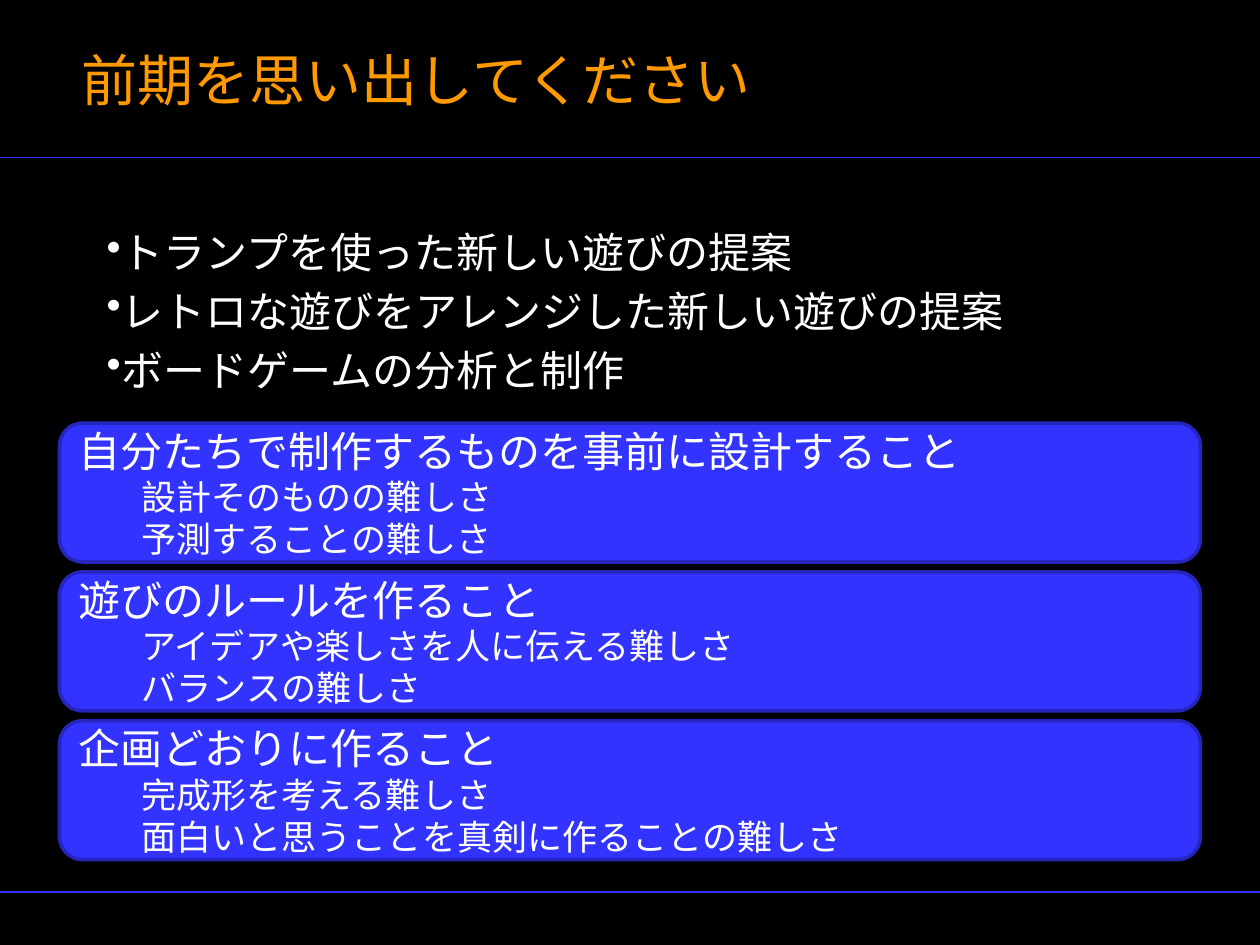
import pptx
import pptx.dml.color
import pptx.enum.shapes
import pptx.enum.text
import pptx.oxml
import pptx.oxml.ns
import pptx.util
from dataclasses import dataclass
from pptx.util import Cm


@dataclass(frozen=True)
class Theme:
    font: str = "Noto Sans CJK JP"
    background: str = "000000"
    title: str = "FF9900"
    text: str = "FFFFFF"
    accent: str = "3333FF"
    border: str = "2626BD"
    title_size: int = 32
    body_size: int = 24
    detail_size: int = 20


theme = Theme()
color = pptx.dml.color.RGBColor.from_string
anchor = pptx.enum.text.MSO_ANCHOR
drawing_ns = pptx.oxml.ns.nsdecls("a")


def frame_text(box, vertical_anchor):
    for name, value in {"word_wrap": True, "vertical_anchor": vertical_anchor}.items():
        setattr(box.text_frame, name, value)
    return box.text_frame


def write(frame, text, size, ink, indent=0, before=0, bullet=None):
    para = frame.paragraphs[0]
    if para.runs:
        para = frame.add_paragraph()
    formats = {
        "alignment": pptx.enum.text.PP_ALIGN.LEFT,
        "space_before": pptx.util.Pt(before),
        "line_spacing": pptx.util.Pt(1.2 * size),
    }
    for name, value in formats.items():
        setattr(para, name, value)
    properties = para._p.get_or_add_pPr()
    properties.set("marL", str(int(Cm(indent))))
    if bullet:
        properties.append(pptx.oxml.parse_xml(f'<a:buChar {drawing_ns} char="{bullet}"/>'))
    span = para.add_run()
    span.text = text
    for name, value in {"name": theme.font, "size": pptx.util.Pt(size)}.items():
        setattr(span.font, name, value)
    span.font.color.rgb = color(ink)
    # Japanese glyphs take the East Asian typeface
    span.font._element.append(
        pptx.oxml.parse_xml(f'<a:ea {drawing_ns} typeface="{theme.font}"/>'))


# Page
deck = pptx.Presentation()
deck.slide_width, deck.slide_height = Cm(25.4), Cm(19.05)
page = deck.slides.add_slide(deck.slide_layouts[6])
page.background.fill.solid()
page.background.fill.fore_color.rgb = color(theme.background)

# Rules below the title and above the footer
for top in (3.18, 17.98):
    rule = page.shapes.add_connector(
        pptx.enum.shapes.MSO_CONNECTOR.STRAIGHT, Cm(0), Cm(top), deck.slide_width, Cm(top))
    rule.line.color.rgb = color(theme.accent)
    rule.line.width = pptx.util.Pt(0.75)
    rule._element.spPr.append(pptx.oxml.parse_xml(f"<a:effectLst {drawing_ns}/>"))

# Title
title = page.shapes.add_textbox(Cm(1.4), Cm(0), Cm(22.8), Cm(3.18))
write(frame_text(title, anchor.MIDDLE), "前期を思い出してください", theme.title_size, theme.title)

# Tasks of the first term
tasks = page.shapes.add_textbox(Cm(1.9), Cm(4.45), Cm(21.6), Cm(12.5))
tasks_frame = frame_text(tasks, anchor.TOP)
for task in (
    "トランプを使った新しい遊びの提案",
    "レトロな遊びをアレンジした新しい遊びの提案",
    "ボードゲームの分析と制作",
):
    write(tasks_frame, task, theme.body_size, theme.text, before=4.8, bullet="•")

# Lessons, each with its difficulties
lessons = {
    "自分たちで制作するものを事前に設計すること": ("設計そのものの難しさ", "予測することの難しさ"),
    "遊びのルールを作ること": ("アイデアや楽しさを人に伝える難しさ", "バランスの難しさ"),
    "企画どおりに作ること": ("完成形を考える難しさ", "面白いと思うことを真剣に作ることの難しさ"),
}
for row, (lesson, difficulties) in enumerate(lessons.items()):
    card = page.shapes.add_shape(
        pptx.enum.shapes.MSO_SHAPE.ROUNDED_RECTANGLE,
        Cm(1.2), Cm(8.53 + 3 * row), Cm(23), Cm(2.8))
    card.shadow.inherit = False
    card.fill.solid()
    card.fill.fore_color.rgb = color(theme.accent)
    card.line.color.rgb = color(theme.border)
    card.line.width = pptx.util.Pt(2)
    card_frame = frame_text(card, anchor.MIDDLE)
    write(card_frame, lesson, theme.body_size, theme.text)
    for difficulty in difficulties:
        write(card_frame, difficulty, theme.detail_size, theme.text, indent=1.27)

deck.save("out.pptx")
